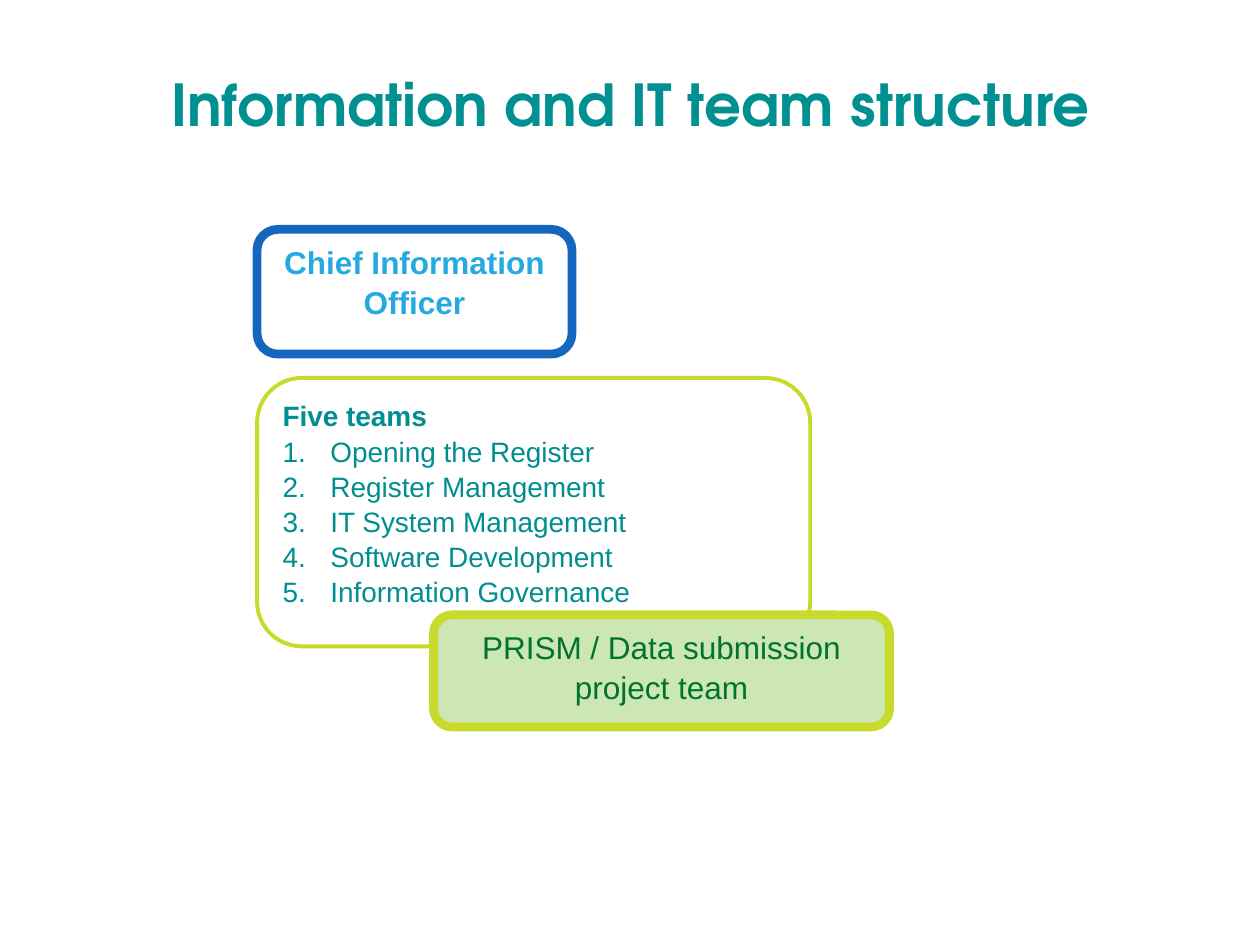
"""Build the Information and IT team structure slide."""
from dataclasses import dataclass

from pptx import Presentation
from pptx.dml.color import RGBColor
from pptx.enum.shapes import MSO_SHAPE
from pptx.enum.text import MSO_ANCHOR, MSO_AUTO_SIZE, PP_ALIGN
from pptx.oxml.xmlchemy import OxmlElement
from pptx.util import Inches, Pt


@dataclass(frozen=True)
class Theme:
    title_font: str = "TeX Gyre Adventor"
    body_font: str = "Arial"
    title: str = "009091"
    teal: str = "008E90"
    blue: str = "1466BF"
    sky: str = "24A9E0"
    lime: str = "C8DA2A"
    pale_green: str = "CCE7B3"
    green: str = "007330"
    title_size: int = 33
    role_size: int = 18
    list_size: int = 16
    thick: float = 5
    thin: float = 2.25
    spacing: float = 1.05
    indent: float = 0.38


THEME = Theme()
TITLE = "Information and IT team structure"
OFFICER = ["Chief Information Officer"]
TEAMS = [
    "Opening the Register",
    "Register Management",
    "IT System Management",
    "Software Development",
    "Information Governance",
]
PROJECT = ["PRISM / Data submission project team"]
LEFT = 2.04


def style(paragraph, font, size, color, bold=False):
    paragraph.font.name = font
    paragraph.font.size = Pt(size)
    paragraph.font.bold = bold
    paragraph.font.color.rgb = RGBColor.from_string(color)


def number(paragraph):
    properties = paragraph._p.get_or_add_pPr()
    indent = Inches(THEME.indent)
    properties.set("marL", str(indent))
    properties.set("indent", str(-indent))
    numbering = OxmlElement("a:buAutoNum")
    numbering.set("type", "arabicPeriod")
    properties.append(numbering)


def add_title(slide):
    title = slide.shapes.title
    title.left, title.top, title.width, title.height = map(Inches, (0.44, 0.64, 9.13, 0.46))
    frame = title.text_frame
    frame.text = TITLE
    frame.auto_size = MSO_AUTO_SIZE.NONE
    frame.vertical_anchor = MSO_ANCHOR.TOP
    frame.margin_left = frame.margin_top = frame.margin_right = frame.margin_bottom = 0
    paragraph = frame.paragraphs[0]
    paragraph.alignment = PP_ALIGN.CENTER
    paragraph.line_spacing = Pt(THEME.title_size)
    style(paragraph, THEME.title_font, THEME.title_size, THEME.title, True)


def add_box(slide, place, lines, line, width, color, size, fill=None, align=PP_ALIGN.CENTER):
    shape = slide.shapes.add_shape(MSO_SHAPE.ROUNDED_RECTANGLE, *map(Inches, place))
    shape.shadow.inherit = False
    shape.line.color.rgb = RGBColor.from_string(line)
    shape.line.width = Pt(width)
    if fill:
        shape.fill.solid()
        shape.fill.fore_color.rgb = RGBColor.from_string(fill)
    else:
        shape.fill.background()
    frame = shape.text_frame
    frame.word_wrap = True
    frame.vertical_anchor = MSO_ANCHOR.TOP
    frame.text = "\n".join(lines)
    for paragraph in frame.paragraphs:
        paragraph.alignment = align
        paragraph.line_spacing = THEME.spacing
        style(paragraph, THEME.body_font, size, color)
    return frame.paragraphs


def main():
    presentation = Presentation()
    presentation.slide_width, presentation.slide_height = Inches(10), Inches(7.5)
    slide = presentation.slides.add_slide(presentation.slide_layouts[5])
    add_title(slide)

    officer = add_box(slide, (LEFT, 1.82, 2.5, 0.99), OFFICER, THEME.blue, THEME.thick,
                      THEME.sky, THEME.role_size)
    officer[0].font.bold = True

    heading, *teams = add_box(slide, (LEFT, 3, 4.39, 2.13), ["Five teams", *TEAMS], THEME.lime,
                              THEME.thin, THEME.teal, THEME.list_size, align=PP_ALIGN.LEFT)
    heading.font.bold = True
    for team in teams:
        number(team)
        style(team, THEME.body_font, THEME.list_size, THEME.teal)

    add_box(slide, (3.44, 4.88, 3.62, 0.89), PROJECT, THEME.lime, THEME.thick,
            THEME.green, THEME.role_size, THEME.pale_green)
    presentation.save("out.pptx")


if __name__ == "__main__":
    main()
